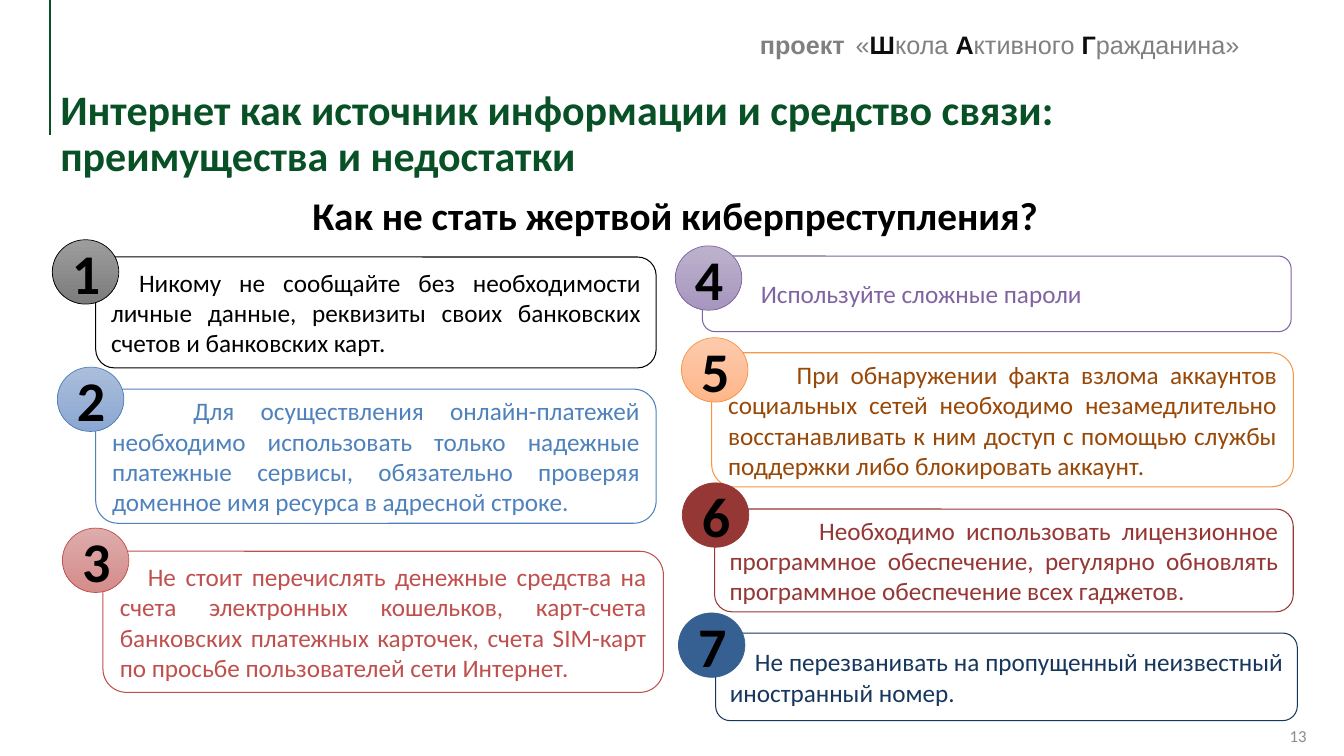
from dataclasses import dataclass

from lxml.etree import SubElement
from pptx import Presentation
from pptx.dml.color import RGBColor as RGB
from pptx.enum.shapes import MSO_CONNECTOR as CONN, MSO_SHAPE as SHAPE
from pptx.enum.text import MSO_ANCHOR as ANCHOR, PP_ALIGN as ALIGN
from pptx.oxml.ns import qn
from pptx.util import Pt


@dataclass(frozen=True)
class Theme:
    """Fonts, type sizes and colours of the slide."""
    font: str = "Calibri"
    header_font: str = "Arial"
    title_size: int = 30
    subtitle_size: int = 28
    body_size: int = 18
    digit_size: int = 40
    page_size: int = 12
    green: str = "085025"
    black: str = "000000"
    ink: str = "0D0D0D"
    gray: str = "808080"
    page_gray: str = "8C8C8C"
    silver_top: str = "9D9D9D"
    silver_end: str = "7C7C7C"
    blue: str = "4F81BD"
    blue_top: str = "ABBEDB"
    blue_end: str = "8CA7D2"
    red: str = "C0504D"
    red_top: str = "DDACAB"
    red_end: str = "D48D8B"
    violet: str = "8064A2"
    violet_top: str = "BDB2CD"
    violet_end: str = "A796BE"
    orange: str = "F79646"
    orange_top: str = "FDCAAC"
    orange_end: str = "FFB68A"
    brown: str = "984807"
    maroon: str = "953735"
    navy: str = "17375E"
    steel: str = "376092"


T = Theme()


def write(tf, text, *, size, color, font=T.font, bold=False, align=ALIGN.LEFT,
          anchor=ANCHOR.TOP, indent=0, spacing=None, wrap=True):
    """Fill a frame with a string or a list of (text, run format) pairs."""
    tf.word_wrap = wrap
    tf.vertical_anchor = anchor
    p = tf.paragraphs[0]
    p.alignment = align
    p.line_spacing = spacing
    if indent:
        p._p.get_or_add_pPr().set("indent", str(Pt(indent)))
    for part, fmt in [(text, {})] if isinstance(text, str) else text:
        r = p.add_run()
        r.text = part
        r.font.name = font
        r.font.size = Pt(fmt.get("size", size))
        r.font.bold = fmt.get("bold", bold)
        r.font.color.rgb = RGB.from_string(fmt.get("color", color))


class Deck:
    """Draws elements on the current slide in the given theme."""

    def __init__(self, slide, theme):
        self.s = slide
        self.t = theme

    def text(self, box, text, **fmt):
        sp = self.s.shapes.add_textbox(*map(Pt, box))
        write(sp.text_frame, text, **fmt)

    def line(self, x1, y1, x2, y2, color, width):
        c = self.s.shapes.add_connector(CONN.STRAIGHT, *map(Pt, (x1, y1, x2, y2)))
        c.line.color.rgb = RGB.from_string(color)
        c.line.width = Pt(width)
        SubElement(c._element.spPr, qn("a:effectLst"))

    def shape(self, kind, box, color, width):
        sp = self.s.shapes.add_shape(kind, *map(Pt, box))
        sp.shadow.inherit = False
        sp.line.color.rgb = RGB.from_string(color)
        sp.line.width = Pt(width)
        return sp

    def card(self, box, text, color, text_color, indent, align=ALIGN.JUSTIFY):
        sp = self.shape(SHAPE.ROUNDED_RECTANGLE, box, color, 0.75)
        sp.fill.background()
        write(sp.text_frame, text, size=self.t.body_size, color=text_color,
              align=align, anchor=ANCHOR.MIDDLE, indent=indent)

    def badge(self, x, y, digit, color, fills):
        sp = self.shape(SHAPE.OVAL, (x, y, 47.5, 46), color, 0.5)
        if len(fills) == 1:
            sp.fill.solid()
            sp.fill.fore_color.rgb = RGB.from_string(fills[0])
        else:
            sp.fill.gradient()
            sp.fill.gradient_angle = 270
            for stop, fill in zip(sp.fill.gradient_stops, fills):
                stop.color.rgb = RGB.from_string(fill)
        write(sp.text_frame, str(digit), size=self.t.digit_size, bold=True,
              color=self.t.black, align=ALIGN.CENTER, anchor=ANCHOR.MIDDLE)


RULES = [
    dict(box=(68.4, 183.6, 400.3, 79.2), at=(37.4, 171.2), indent=20,
         color=T.black, fills=(T.silver_top, T.silver_end),
         text="Никому не сообщайте без необходимости личные данные, "
              "реквизиты своих банковских счетов и банковских карт."),
    dict(box=(68.4, 278, 400.3, 95.8), at=(41, 262.2), indent=58,
         color=T.blue, fills=(T.blue_top, T.blue_end),
         text="Для осуществления онлайн-платежей необходимо использовать "
              "только надежные платежные сервисы, обязательно проверяя "
              "доменное имя ресурса в адресной строке."),
    dict(box=(73.6, 393.8, 400.3, 100.8), at=(44.6, 377.2), indent=20,
         color=T.red, fills=(T.red_top, T.red_end),
         text="Не стоит перечислять денежные средства на счета электронных "
              "кошельков, карт-счета банковских платежных карточек, счета "
              "SIM-карт по просьбе пользователей сети Интернет."),
    dict(box=(501.8, 182.9, 420.5, 54), at=(482.4, 175.6), indent=32,
         color=T.violet, fills=(T.violet_top, T.violet_end), align=ALIGN.LEFT,
         text="Используйте сложные пароли"),
    dict(box=(508.4, 252, 415.5, 95.8), at=(486.8, 241.2), indent=49,
         color=T.orange, fills=(T.orange_top, T.orange_end), text_color=T.brown,
         text="При обнаружении факта взлома аккаунтов социальных сетей "
              "необходимо незамедлительно восстанавливать к ним доступ "
              "с помощью службы поддержки либо блокировать аккаунт."),
    dict(box=(510.5, 363.6, 413.3, 73.4), at=(487.4, 344.9), indent=64,
         color=T.maroon, fills=(T.maroon,),
         text="Необходимо использовать лицензионное программное обеспечение, "
              "регулярно обновлять программное обеспечение всех гаджетов."),
    dict(box=(511.2, 452.2, 415.5, 62.6), at=(484.6, 437.8), indent=18,
         color=T.navy, fills=(T.steel,), badge_line=T.steel,
         text="Не перезванивать на пропущенный неизвестный "
              "иностранный номер."),
]


def main():
    prs = Presentation()
    prs.slide_width, prs.slide_height = Pt(960), Pt(540)
    deck = Deck(prs.slides.add_slide(prs.slide_layouts[6]), T)

    initial = dict(color=T.ink, bold=True)
    deck.text((535.7, 7.2, 360.7, 41),
              [("проект", dict(bold=True)), (" ", dict(size=28)), ("«", {}),
               ("Ш", initial), ("кола ", {}), ("А", initial),
               ("ктивного ", {}), ("Г", initial), ("ражданина»", {})],
              size=T.body_size, color=T.gray, font=T.header_font, wrap=False)
    deck.text((771.1, 513.4, 169.2, 23.8), "13", size=T.page_size,
              color=T.page_gray, align=ALIGN.RIGHT, anchor=ANCHOR.MIDDLE)
    deck.line(36, 0, 36, 96.5, T.green, 1.5)
    deck.text((36, 58.3, 789, 76.3),
              "Интернет как источник информации и средство связи: "
              "преимущества и недостатки",
              size=T.title_size, color=T.green, bold=True,
              anchor=ANCHOR.MIDDLE, spacing=0.9)
    deck.text((216, 133.2, 543, 41), "Как не стать жертвой киберпреступления?",
              size=T.subtitle_size, color=T.black, bold=True)

    for number, rule in enumerate(RULES, 1):
        color = rule["color"]
        deck.card(rule["box"], rule["text"], color, rule.get("text_color", color),
                  rule["indent"], rule.get("align", ALIGN.JUSTIFY))
        deck.badge(*rule["at"], number, rule.get("badge_line", color), rule["fills"])

    prs.save("out.pptx")


if __name__ == "__main__":
    main()
